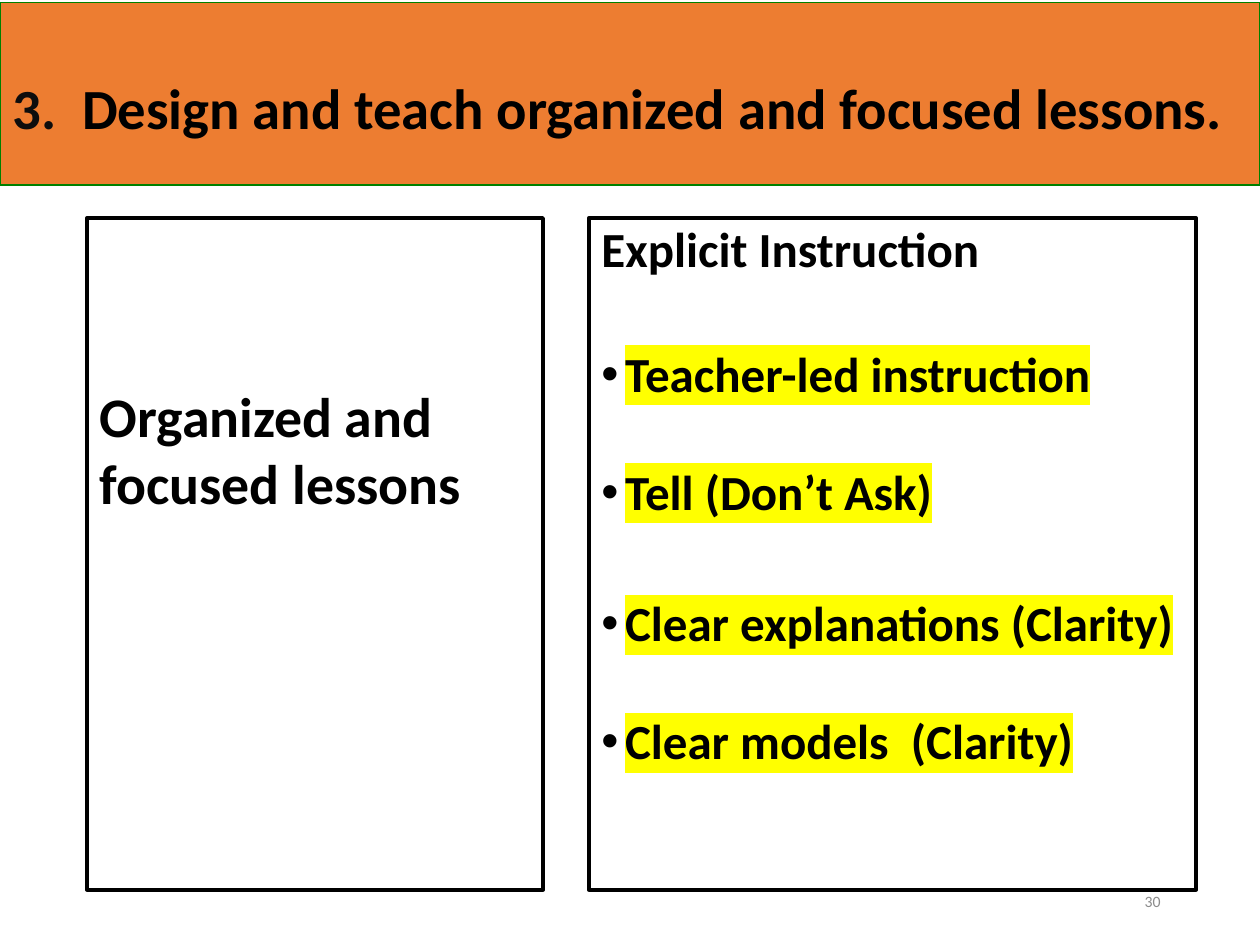
import dataclasses

import lxml.etree
import pptx
import pptx.dml.color
import pptx.enum.text
import pptx.oxml.ns
import pptx.util

Pt = pptx.util.Pt
Align = pptx.enum.text.PP_ALIGN
Anchor = pptx.enum.text.MSO_ANCHOR

COLORS = {
    "banner": "ED7D31",
    "banner_line": "008000",
    "number": "0D0D0D",
    "text": "000000",
    "highlight": "FFFF00",
    "page": "8C8C8C",
}
FONT = "Calibri"
BULLET_INDENT = 13.5
PANEL_TOP, PANEL_HEIGHT = 124.6, 383.8


@dataclasses.dataclass(frozen=True)
class Box:
    left: float
    top: float
    width: float
    height: float
    inset_top: float = 3.6
    anchor: Anchor = Anchor.TOP


@dataclasses.dataclass(frozen=True)
class Line:
    text: str
    size: float
    space_before: float = 0
    spacing: float = 1.0
    bullet: bool = False


BANNER = Box(0, 1.4, 720, 104.4, 18.6, Anchor.MIDDLE)
TOPIC_PANEL = Box(49.7, PANEL_TOP, 260.6, PANEL_HEIGHT, 93.6)
DETAIL_PANEL = Box(336.5, PANEL_TOP, 347, PANEL_HEIGHT, 4)
PAGE_BOX = Box(508.3, 500.4, 162, 28.8, anchor=Anchor.MIDDLE)

TITLE_PARTS = [
    ("3.  ", "number"),
    ("Design and teach organized and focused lessons.", "text"),
]
TOPIC_LINES = [Line("Organized and focused lessons", 31.9)]
DETAIL_LINES = [
    Line("Explicit Instruction", 28, 0, 0.9),
    Line("Teacher-led instruction", 28, 41, 0.9, True),
    Line("Tell (Don’t Ask)", 28, 37.25, 0.9, True),
    Line("Clear explanations (Clarity)", 28, 44.75, 0.9, True),
    Line("Clear models  (Clarity)", 28, 37.25, 0.9, True),
]


def rgb(name: str) -> pptx.dml.color.RGBColor:
    return pptx.dml.color.RGBColor.from_string(COLORS[name])


def place(shape, box: Box) -> None:
    shape.left, shape.top = Pt(box.left), Pt(box.top)
    shape.width, shape.height = Pt(box.width), Pt(box.height)
    frame = shape.text_frame
    frame.auto_size = pptx.enum.text.MSO_AUTO_SIZE.NONE
    frame.word_wrap = True
    frame.vertical_anchor = box.anchor
    frame.margin_left = frame.margin_right = Pt(7.2)
    frame.margin_top, frame.margin_bottom = Pt(box.inset_top), Pt(3.6)


def outline(shape, color: str, width: float) -> None:
    shape.line.color.rgb = rgb(color)
    shape.line.width = Pt(width)


def format_run(run, size: float, color: str, bold: bool = True) -> None:
    run.font.name = FONT
    run.font.size = Pt(size)
    run.font.bold = bold
    run.font.color.rgb = rgb(color)


def highlight(run) -> None:
    qn = pptx.oxml.ns.qn
    marker = lxml.etree.Element(qn("a:highlight"))
    lxml.etree.SubElement(marker, qn("a:srgbClr"), val=COLORS["highlight"])
    run.font._element.find(qn("a:solidFill")).addnext(marker)


def set_bullet(paragraph, shown: bool) -> None:
    qn = pptx.oxml.ns.qn
    properties = paragraph._p.get_or_add_pPr()
    indent = Pt(BULLET_INDENT) if shown else 0
    properties.set("marL", str(indent))
    properties.set("indent", str(-indent))
    if shown:
        lxml.etree.SubElement(properties, qn("a:buFont"), typeface="Arial")
        lxml.etree.SubElement(properties, qn("a:buChar"), char="•")
    else:
        lxml.etree.SubElement(properties, qn("a:buNone"))


def draw_banner(shape) -> None:
    place(shape, BANNER)
    shape.fill.solid()
    shape.fill.fore_color.rgb = rgb("banner")
    outline(shape, "banner_line", 0.75)
    paragraph = shape.text_frame.paragraphs[0]
    paragraph.alignment = Align.LEFT
    for text, color in TITLE_PARTS:
        run = paragraph.add_run()
        run.text = text
        format_run(run, 32.4, color)


def draw_panel(shape, box: Box, lines: list[Line]) -> None:
    place(shape, box)
    outline(shape, "text", 2.25)
    frame = shape.text_frame
    frame.text = "\n".join(line.text for line in lines)
    for paragraph, line in zip(frame.paragraphs, lines):
        paragraph.alignment = Align.LEFT
        paragraph.line_spacing = line.spacing
        paragraph.space_before = Pt(line.space_before)
        paragraph.space_after = Pt(0)
        set_bullet(paragraph, line.bullet)
        run = paragraph.runs[0]
        format_run(run, line.size, "text")
        if line.bullet:
            highlight(run)


def draw_page_number(slide, number: str) -> None:
    shape = slide.shapes.add_textbox(0, 0, 0, 0)
    place(shape, PAGE_BOX)
    shape.text_frame.text = number
    paragraph = shape.text_frame.paragraphs[0]
    paragraph.alignment = Align.RIGHT
    format_run(paragraph.runs[0], 9, "page", bold=False)


def main() -> None:
    presentation = pptx.Presentation()
    presentation.slide_width, presentation.slide_height = Pt(720), Pt(540)
    slide = presentation.slides.add_slide(presentation.slide_layouts[3])
    draw_banner(slide.shapes.title)
    draw_panel(slide.placeholders[1], TOPIC_PANEL, TOPIC_LINES)
    draw_panel(slide.placeholders[2], DETAIL_PANEL, DETAIL_LINES)
    draw_page_number(slide, "30")
    presentation.save("out.pptx")


if __name__ == "__main__":
    main()
